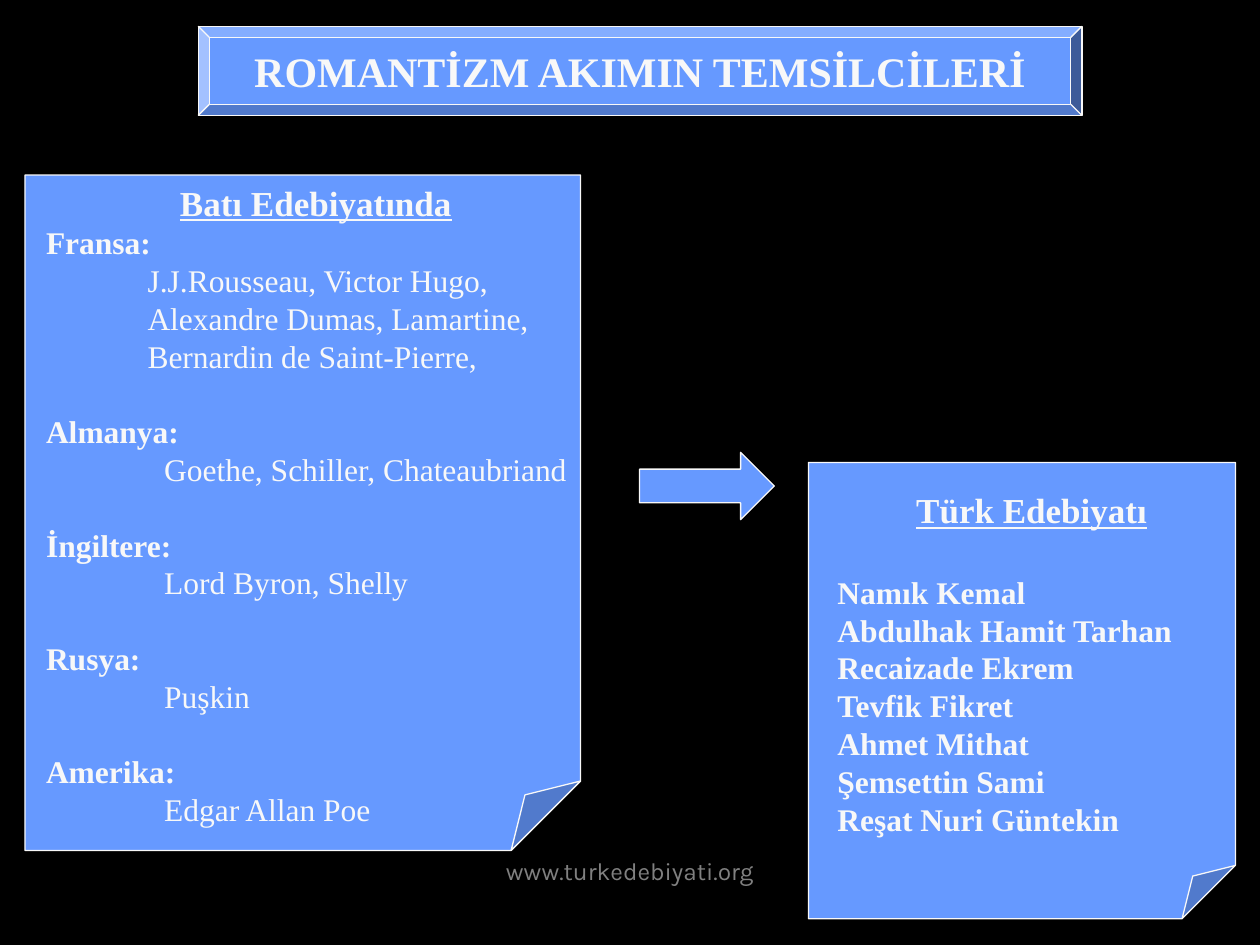
from lxml.etree import SubElement
from pptx import Presentation
from pptx.dml.color import RGBColor
from pptx.enum.shapes import MSO_SHAPE
from pptx.enum.text import MSO_ANCHOR, PP_ALIGN
from pptx.oxml.ns import qn
from pptx.util import Pt

BLACK, BLUE, WHITE, GREY = "000000", "6699FF", "F8F8F8", "808080"
SERIF = "Times New Roman"
LINE_RATIO = 1.2
BODY_SIZE, HEADING_SIZE = 18, 20

WESTERN_AUTHORS = [
    ("Fransa:", 58, ["J.J.Rousseau, Victor Hugo,", "Alexandre Dumas, Lamartine,",
                     "Bernardin de Saint-Pierre,"]),
    ("Almanya:", 67.5, ["Goethe, Schiller, Chateaubriand"]),
    ("İngiltere:", 67.5, ["Lord Byron, Shelly"]),
    ("Rusya:", 67.5, ["Puşkin"]),
    ("Amerika:", 67.5, ["Edgar Allan Poe"]),
]
TURKISH_AUTHORS = ["Namık Kemal", "Abdulhak Hamit Tarhan", "Recaizade Ekrem", "Tevfik Fikret",
                   "Ahmet Mithat", "Şemsettin Sami", "Reşat Nuri Güntekin"]


def color(value):
    return RGBColor.from_string(value)


def add_panel(page, kind, box):
    panel = page.shapes.add_shape(kind, *map(Pt, box))
    panel.shadow.inherit = False
    panel.fill.solid()
    panel.fill.fore_color.rgb = color(BLUE)
    panel.line.color.rgb = color(WHITE)
    panel.line.width = Pt(0.75)
    return panel


def add_folded_card(page, box):
    """Add a card whose fold is an eighth of its shorter side."""
    card = add_panel(page, MSO_SHAPE.FOLDED_CORNER, box)
    geometry = card._element.spPr.find(qn("a:prstGeom"))
    for old_values in geometry.findall(qn("a:avLst")):
        geometry.remove(old_values)
    values = SubElement(geometry, qn("a:avLst"))
    SubElement(values, qn("a:gd"), name="adj", fmla="val 12500")


def add_text_frame(page, box, wrap=True):
    frame = page.shapes.add_textbox(*map(Pt, box)).text_frame
    frame.word_wrap = wrap
    return frame


def style(para, size, bold=False, name=SERIF, ink=WHITE):
    para.font.size = Pt(size)
    para.font.bold = bold
    para.font.name = name
    para.font.color.rgb = color(ink)


def write_line(frame, text, size=BODY_SIZE, bold=True, indent=0, before=0):
    """Fill the first paragraph if it is free, otherwise append one."""
    first = frame.paragraphs[0]
    para = frame.add_paragraph() if first.runs else first
    para.add_run().text = text
    para.line_spacing = Pt(size * LINE_RATIO)
    if before:
        para.space_before = Pt(before)
    if indent:
        properties = para._p.get_or_add_pPr()
        properties.set("marL", str(int(Pt(indent))))
        properties.set("indent", "0")
    style(para, size, bold)
    return para


def write_heading(frame, text, indent):
    write_line(frame, text, HEADING_SIZE, indent=indent).font.underline = True


def add_title(page, box):
    frame = add_panel(page, MSO_SHAPE.BEVEL, box).text_frame
    frame.word_wrap = False
    frame.vertical_anchor = MSO_ANCHOR.MIDDLE
    para = frame.paragraphs[0]
    para.text = "ROMANTİZM AKIMIN TEMSİLCİLERİ"
    para.alignment = PP_ALIGN.CENTER
    style(para, 24, bold=True)


def add_western_card(page, box):
    left, top, width, height = box
    add_folded_card(page, box)
    frame = add_text_frame(page, (left + 5, top, width + 11.5, height - 8.5))
    write_heading(frame, "Batı Edebiyatında", 76.5)
    for number, (country, indent, lines) in enumerate(WESTERN_AUTHORS):
        write_line(frame, country, before=BODY_SIZE * LINE_RATIO if number else 0)
        for line in lines:
            write_line(frame, line, bold=False, indent=indent)


def add_turkish_card(page, box):
    left, top, width, height = box
    add_folded_card(page, box)
    frame = add_text_frame(page, (left + 9.5, top + 11.5, width - 36.5, height - 54), wrap=False)
    write_heading(frame, "Türk Edebiyatı", 45)
    for number, author in enumerate(TURKISH_AUTHORS):
        write_line(frame, author, before=0 if number else HEADING_SIZE * LINE_RATIO)


def add_footer(page, box):
    frame = add_text_frame(page, box)
    frame.vertical_anchor = MSO_ANCHOR.BOTTOM
    para = frame.paragraphs[0]
    para.text = "www.turkedebiyati.org"
    para.alignment = PP_ALIGN.CENTER
    style(para, 14, name="Karla", ink=GREY)


def main():
    deck = Presentation()
    deck.slide_width, deck.slide_height = Pt(720), Pt(540)
    page = deck.slides.add_slide(deck.slide_layouts[6])
    page.background.fill.solid()
    page.background.fill.fore_color.rgb = color(BLACK)

    add_title(page, (113.25, 15, 505, 51))
    add_western_card(page, (14.25, 100, 317.5, 386))
    add_turkish_card(page, (462, 264.25, 244, 260.75))
    add_panel(page, MSO_SHAPE.RIGHT_ARROW, (365.5, 258.5, 77, 38.5))
    add_footer(page, (246, 473.75, 228, 36))
    deck.save("out.pptx")


if __name__ == "__main__":
    main()
